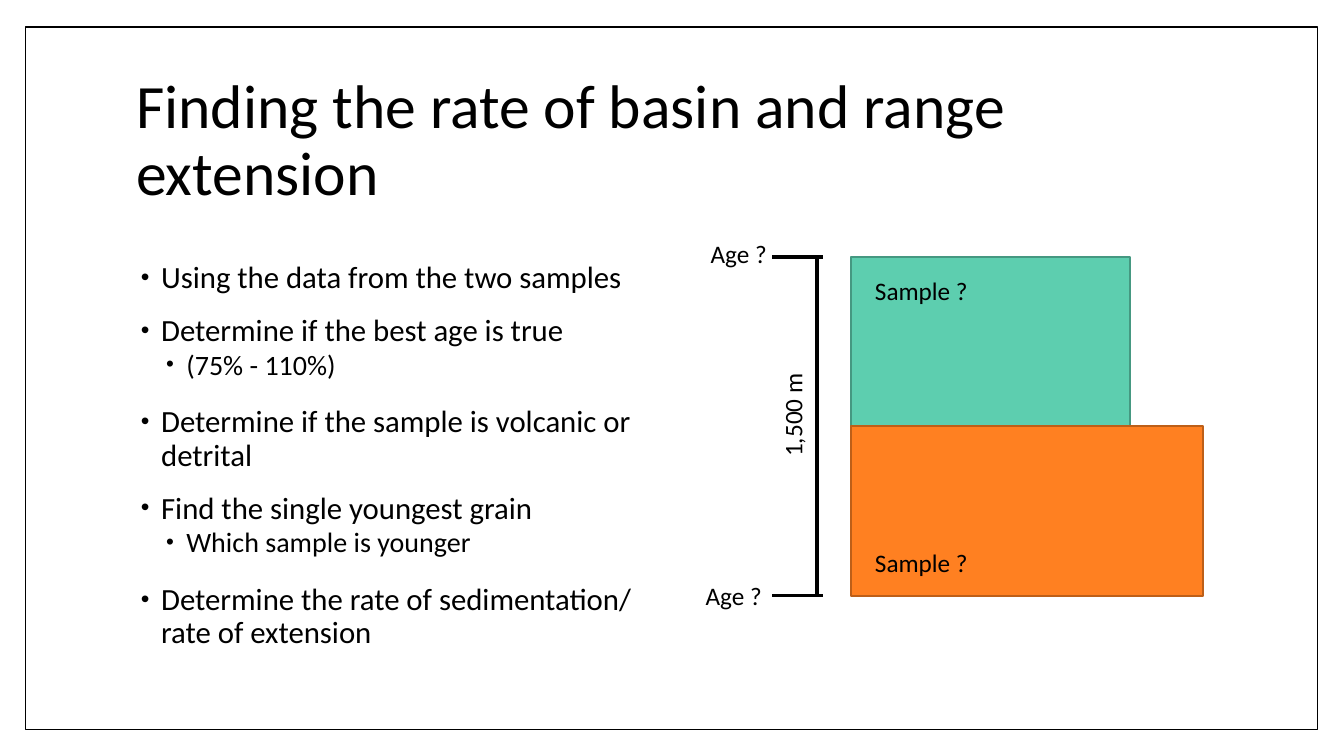
from dataclasses import dataclass

from lxml.etree import SubElement
from pptx import Presentation
from pptx.dml.color import RGBColor
from pptx.enum.shapes import MSO_CONNECTOR, MSO_SHAPE
from pptx.enum.text import MSO_ANCHOR, MSO_AUTO_SIZE, PP_ALIGN
from pptx.oxml.ns import qn
from pptx.util import Inches, Length, Pt

CELL = 0.5  # grid columns and rows, in inches
FONT = "Calibri"
BLACK = "000000"
WHITE = "FFFFFF"


@dataclass
class Area:
    column: float
    row: float
    columns: float
    rows: float


@dataclass
class Block:
    area: Area
    fill: str
    line: str
    weight: float


@dataclass
class Label:
    text: str
    area: Area
    rotation: float = 0


@dataclass
class Rule:
    start: tuple[float, float]
    end: tuple[float, float]
    weight: float


@dataclass
class Bullet:
    text: str
    level: int = 0


# Section geometry, in grid cells
LAYER_LEFT, LAYER_TOP, LAYER_ROWS = 16.88, 5.1, 3.36
LAYER_BASE = LAYER_TOP + 2 * LAYER_ROWS
BAR_COLUMN, TICK_START, TICK_END = 16.2, 15.32, 16.32

TITLE = "Finding the rate of basin and range extension"
TITLE_AREA = Area(2.5, 1.34, 21.6, 2.96)
LIST_AREA = Area(2.5, 5.1, 10.4, 8.8)
FRAME = Block(Area(0.5, 0.54, 25.64, 13.94), WHITE, BLACK, 1)
LAYERS = [
    Block(Area(LAYER_LEFT, LAYER_TOP, 5.54, LAYER_ROWS), "5DCEAF", "459881", 1.5),
    Block(Area(LAYER_LEFT, LAYER_TOP + LAYER_ROWS, 6.98, LAYER_ROWS), "FF8021", "BD5F18", 1.5),
]
RULES = [Rule((BAR_COLUMN, LAYER_TOP), (BAR_COLUMN, LAYER_BASE), 3)] + [
    Rule((TICK_START, row), (TICK_END, row), 2.25) for row in (LAYER_BASE, LAYER_TOP)
]
LABELS = [
    Label("1,500 m", Area(14.48, 7.62, 2.48, 0.8), 270),
    Label("Sample ?", Area(17.16, 10.76, 2.34, 0.8)),
    Label("Sample ?", Area(17.16, 5.36, 2.34, 0.8)),
    Label("Age ?", Area(13.9, 4.64, 2.34, 0.8)),
    Label("Age ?", Area(13.8, 11.42, 2.34, 0.8)),
]
BULLETS = [
    Bullet("Using the data from the two samples"),
    Bullet("Determine if the best age is true"),
    Bullet("(75% - 110%)", 1),
    Bullet("Determine if the sample is volcanic or detrital"),
    Bullet("Find the single youngest grain"),
    Bullet("Which sample is younger", 1),
    Bullet("Determine the rate of sedimentation/ rate of extension"),
]
LEVEL_SIZES = [22, 20]
LEVEL_INDENTS = [0.25, 0.5]
LEVEL_SPACING = [
    {"space_before": Pt(14), "line_spacing": 0.9},
    {"space_before": Pt(2), "space_after": Pt(4), "line_spacing": 0.9},
]


def grid(cells: float) -> Length:
    return Inches(cells * CELL)


def place(area: Area) -> tuple[Length, ...]:
    return tuple(grid(n) for n in (area.column, area.row, area.columns, area.rows))


def color(value: str) -> RGBColor:
    return RGBColor.from_string(value)


def apply(target, values: dict) -> None:
    for name, value in values.items():
        setattr(target, name, value)


def format_font(font, size: float) -> None:
    apply(font, {"name": FONT, "size": Pt(size)})
    font.color.rgb = color(BLACK)


def add_block(page, block: Block):
    shape = page.shapes.add_shape(MSO_SHAPE.RECTANGLE, *place(block.area))
    shape.shadow.inherit = False
    shape.fill.solid()
    shape.fill.fore_color.rgb = color(block.fill)
    shape.line.color.rgb = color(block.line)
    shape.line.width = Pt(block.weight)
    return shape


def add_rule(page, rule: Rule) -> None:
    ends = [grid(n) for n in (*rule.start, *rule.end)]
    line = page.shapes.add_connector(MSO_CONNECTOR.STRAIGHT, *ends)
    line.line.color.rgb = color(BLACK)
    line.line.width = Pt(rule.weight)
    SubElement(line.element.spPr, qn("a:effectLst"))


def add_label(page, label: Label) -> None:
    box = page.shapes.add_textbox(*place(label.area))
    box.rotation = label.rotation
    apply(box.text_frame, {"word_wrap": True, "auto_size": MSO_AUTO_SIZE.SHAPE_TO_FIT_TEXT})
    para = box.text_frame.paragraphs[0]
    span = para.add_run()
    span.text = label.text
    format_font(span.font, 18)


def add_bullet_mark(para, indent: float) -> None:
    properties = para._p.get_or_add_pPr()
    properties.set("marL", str(Inches(indent)))
    properties.set("indent", str(Inches(-0.2)))
    mark_color = SubElement(properties, qn("a:buClr"))
    SubElement(mark_color, qn("a:srgbClr"), val=BLACK)
    SubElement(properties, qn("a:buSzPct"), val="80000")
    SubElement(properties, qn("a:buFont"), typeface="Arial")
    SubElement(properties, qn("a:buChar"), char="•")


def add_bullets(page, area: Area, bullets: list[Bullet]) -> None:
    frame = page.shapes.add_textbox(*place(area)).text_frame
    frame.word_wrap = True
    for index, bullet in enumerate(bullets):
        para = frame.add_paragraph() if index else frame.paragraphs[0]
        para.level = bullet.level
        add_bullet_mark(para, LEVEL_INDENTS[bullet.level])
        apply(para, LEVEL_SPACING[bullet.level])
        if index == 0:
            para.space_before = Pt(0)
        span = para.add_run()
        span.text = bullet.text
        format_font(span.font, LEVEL_SIZES[bullet.level])


def format_title(title) -> None:
    left, top, width, height = place(TITLE_AREA)
    apply(title, {"left": left, "top": top, "width": width, "height": height})
    title.text_frame.text = TITLE
    apply(title.text_frame, {"vertical_anchor": MSO_ANCHOR.MIDDLE, "word_wrap": True,
                             "auto_size": MSO_AUTO_SIZE.NONE})
    para = title.text_frame.paragraphs[0]
    apply(para, {"alignment": PP_ALIGN.LEFT, "line_spacing": 0.9, "space_before": Pt(0)})
    format_font(para.runs[0].font, 44)


def main() -> None:
    deck = Presentation()
    apply(deck, {"slide_width": Inches(13.33), "slide_height": Inches(7.5)})
    page = deck.slides.add_slide(deck.slide_layouts[5])

    # Title in front of the page frame
    title = page.shapes.title
    format_title(title)
    title.element.addprevious(add_block(page, FRAME).element)

    # Steps on the left
    add_bullets(page, LIST_AREA, BULLETS)

    # Rock layers with the thickness scale
    for layer in LAYERS:
        add_block(page, layer)
    for rule in RULES:
        add_rule(page, rule)
    for label in LABELS:
        add_label(page, label)

    deck.save("out.pptx")


if __name__ == "__main__":
    main()
